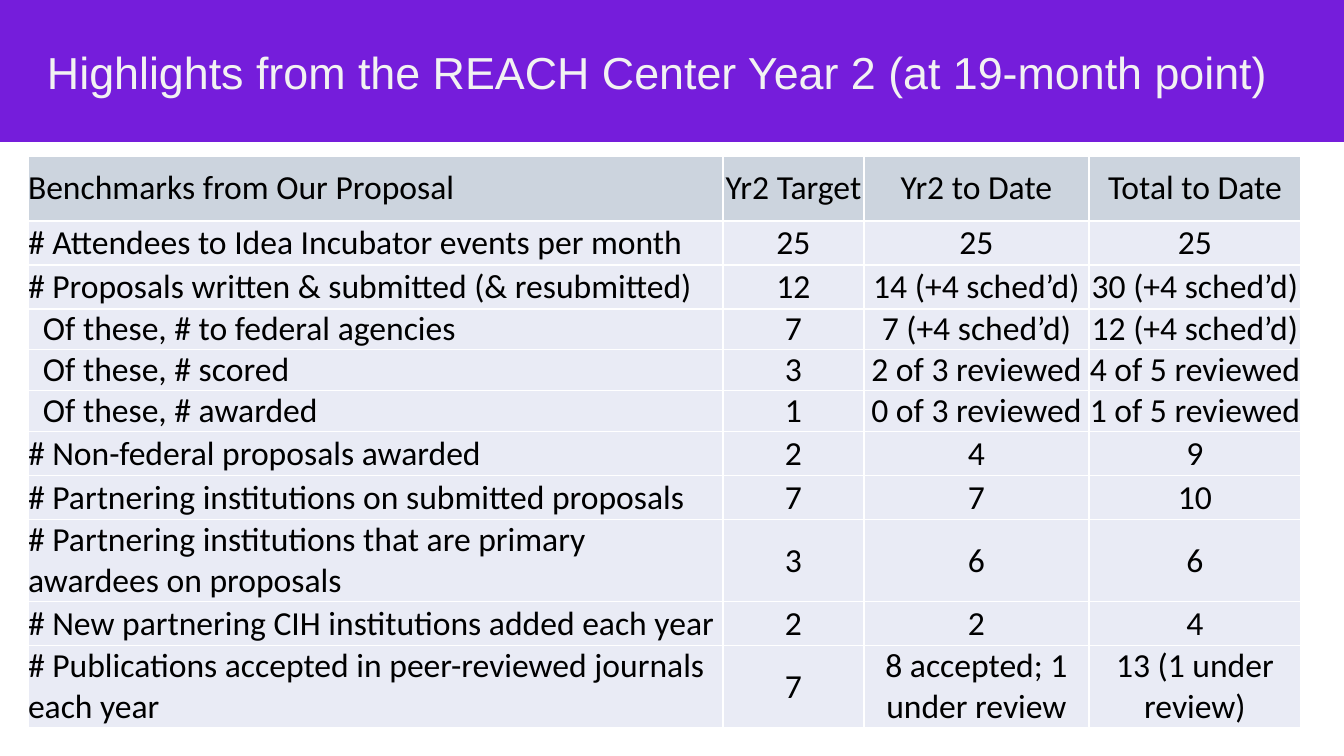
from lxml import etree
from pptx import Presentation
from pptx import util as u
from pptx.dml.color import RGBColor
from pptx.enum import shapes, text
from pptx.oxml import parse_xml
from pptx.oxml.ns import nsdecls

PURPLE = RGBColor(0x75, 0x1D, 0xDB)
OFF_WHITE = RGBColor(0xF2, 0xF2, 0xF2)
BLACK = RGBColor(0, 0, 0)
HEADER_FILL = RGBColor(0xCC, 0xD4, 0xDE)
BODY_FILL = RGBColor(0xE9, 0xEB, 0xF5)
WHITE = RGBColor(0xFF, 0xFF, 0xFF)

EMU_PER_PX = 914400 / 100.8
WIDTH, HEIGHT = 1344, 756
SUB_ITEM_INDENT = 15
LINE, PLAIN, DOUBLE = 41, 44, 82

COLUMN_WIDTHS = [695, 141, 225, 212]
BENCHMARKS = [
    (65, "Benchmarks from Our Proposal", "Yr2 Target", "Yr2 to Date", "Total to Date"),
    (PLAIN, "# Attendees to Idea Incubator events per month", "25", "25", "25"),
    (PLAIN, "# Proposals written & submitted (& resubmitted)", "12",
     "14 (+4 sched’d)", "30 (+4 sched’d)"),
    (LINE, "Of these, # to federal agencies", "7", "7 (+4 sched’d)", "12 (+4 sched’d)"),
    (LINE, "Of these, # scored", "3", "2 of 3 reviewed", "4 of 5 reviewed"),
    (LINE, "Of these, # awarded", "1", "0 of 3 reviewed", "1 of 5 reviewed"),
    (PLAIN, "# Non-federal proposals awarded", "2", "4", "9"),
    (PLAIN, "# Partnering institutions on submitted proposals", "7", "7", "10"),
    (DOUBLE, "# Partnering institutions that are primary awardees on proposals",
     "3", "6", "6"),
    (PLAIN, "# New partnering CIH institutions added each year", "2", "2", "4"),
    (DOUBLE, "# Publications accepted in peer-reviewed journals each year", "7",
     "8 accepted; 1 under review", "13 (1 under review)"),
]


def px(length):
    return u.Emu(round(length * EMU_PER_PX))


def apply(target, values):
    for name, value in values.items():
        setattr(target, name, value)


class SlideBuilder:
    title_font = {"name": "Arial", "size": u.Pt(32)}
    table_font = {"name": "Calibri", "size": u.Pt(24), "bold": False}
    no_margins = {f"margin_{side}": 0 for side in ("left", "top", "right", "bottom")}
    middle = {**no_margins, "vertical_anchor": text.MSO_ANCHOR.MIDDLE}

    def __init__(self, presentation):
        self.slide = presentation.slides.add_slide(presentation.slide_layouts[6])

    def band(self, box, color):
        shape = self.slide.shapes.add_shape(shapes.MSO_SHAPE.RECTANGLE, *map(px, box))
        shape.shadow.inherit = False
        shape.fill.solid()
        shape.fill.fore_color.rgb = color
        shape.line.fill.background()

    def set_text(self, paragraph, words, font, color):
        paragraph.text = words
        apply(paragraph.font, font)
        paragraph.font.color.rgb = color

    def title(self, box, words):
        frame = self.slide.shapes.add_textbox(*map(px, box)).text_frame
        apply(frame, {**self.middle, "word_wrap": True})
        self.set_text(frame.paragraphs[0], words, self.title_font, OFF_WHITE)

    def border(self, cell):
        """Draw a 1 pt white line on all four sides of the cell."""
        properties = cell._tc.get_or_add_tcPr()
        for position, side in enumerate("LRTB"):
            line = parse_xml(f'<a:ln{side} {nsdecls("a")} w="{u.Pt(1)}"/>')
            fill = etree.SubElement(line, "{%s}solidFill" % line.nsmap["a"])
            etree.SubElement(fill, "{%s}srgbClr" % line.nsmap["a"], val=str(WHITE))
            properties.insert(position, line)

    def cell(self, cell, words, fill, centered):
        apply(cell, self.middle)
        if words.startswith("Of these"):
            cell.margin_left = px(SUB_ITEM_INDENT)
        cell.fill.solid()
        cell.fill.fore_color.rgb = fill
        self.border(cell)
        paragraph = cell.text_frame.paragraphs[0]
        self.set_text(paragraph, words, self.table_font, BLACK)
        paragraph.alignment = text.PP_ALIGN.CENTER if centered else text.PP_ALIGN.LEFT

    def table(self, left, top, widths, rows):
        """Each row is its height followed by its cell texts."""
        box = left, top, sum(widths), sum(row[0] for row in rows)
        table = self.slide.shapes.add_table(len(rows), len(widths), *map(px, box)).table
        for column, width in zip(table.columns, widths):
            column.width = px(width)
        for r, (height, *texts) in enumerate(rows):
            table.rows[r].height = px(height)
            for c, words in enumerate(texts):
                fill = BODY_FILL if r else HEADER_FILL
                self.cell(table.cell(r, c), words, fill, centered=c > 0)


def main():
    presentation = Presentation()
    apply(presentation, {"slide_width": px(WIDTH), "slide_height": px(HEIGHT)})
    builder = SlideBuilder(presentation)
    builder.band((0, 0, WIDTH, 142), PURPLE)
    builder.title((47, 14, 1234, 115),
                  "Highlights from the REACH Center Year 2 (at 19-month point)")
    builder.table(28, 156, COLUMN_WIDTHS, BENCHMARKS)
    presentation.save("out.pptx")


if __name__ == "__main__":
    main()
